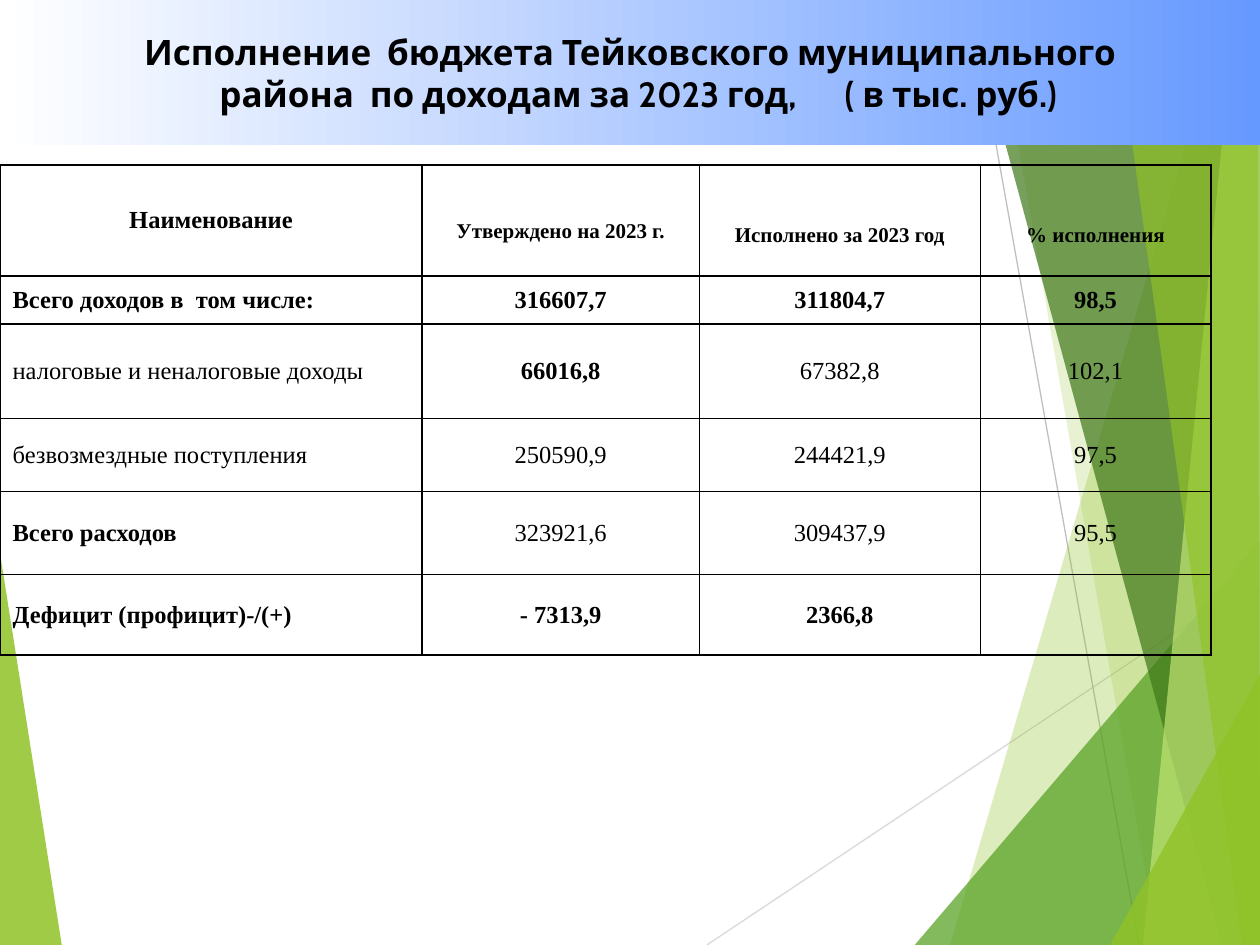
from lxml import etree
from pptx import Presentation, util as u
from pptx.dml.color import RGBColor
from pptx.enum import shapes, text
from pptx.oxml.ns import qn

BLACK = RGBColor(0, 0, 0)
WHITE = RGBColor(255, 255, 255)
BLUE = RGBColor(0x66, 0x99, 0xFF)
LIME = RGBColor(0x90, 0xC2, 0x26)
PALE = RGBColor(0xC0, 0xE4, 0x74)
GREEN = RGBColor(0x54, 0xA0, 0x21)
DARK = RGBColor(0x3F, 0x78, 0x19)
GREY = RGBColor(0xBF, 0xBF, 0xBF)
SILVER = RGBColor(0xD9, 0xD9, 0xD9)

# Points in inches, colour, opacity in percent
LEFT = [([(0, 4.39), (0.49, 7.5), (0, 7.5)], LIME, 85)]
RAYS = [
    ([(9.75, 0), (7.54, 7.5), (10, 7.5), (10, 0)], LIME, 30),
    ([(7.88, 0), (9.19, 7.5), (10, 7.5), (10, 0)], LIME, 20),
    ([(7.26, 7.5), (10, 4.29), (10, 7.5)], GREEN, 72),
    ([(7.67, 0), (9.7, 7.5), (10, 7.5), (10, 0)], DARK, 70),
    ([(9.81, 0), (9.07, 7.5), (10, 7.5), (10, 0)], PALE, 70),
    ([(8.83, 0), (9.86, 7.5), (10, 7.5), (9.98, 0)], LIME, 65),
    ([(8.81, 7.5), (10, 5.35), (10, 7.5)], LIME, 80),
]
LINES = [((5.61, 7.5), (10, 4.57), SILVER), ((7.7, 0), (9.04, 7.5), GREY)]

HEAD = ["Наименование", "Утверждено на 2023 г.", "Исполнено за 2023 год", "% исполнения"]
# Cell texts and, for each, whether it is bold
ROWS = [
    (["Всего доходов в  том числе:", "316607,7", "311804,7", "98,5"], (1, 1, 1, 1)),
    (["налоговые и неналоговые доходы", "66016,8", "67382,8", "102,1"], (0, 1, 0, 0)),
    (["безвозмездные поступления", "250590,9", "244421,9", "97,5"], (0, 0, 0, 0)),
    (["Всего расходов", "323921,6", "309437,9", "95,5"], (1, 0, 0, 0)),
    (["Дефицит (профицит)-/(+)", "- 7313,9", "2366,8", ""], (1, 1, 1, 0)),
]
WIDTHS = [3.35, 2.2, 2.23, 1.83]
HEIGHTS = [0.88, 0.38, 0.75, 0.58, 0.66, 0.64]


def add_run(para, words, font, size, bold=True):
    run = para.add_run()
    run.text = words
    run.font.name = font
    run.font.size = u.Pt(size)
    run.font.bold = bool(bold)
    run.font.color.rgb = BLACK
    return run


def add_facets(slide, left, top, facets):
    for points, color, alpha in facets:
        spots = [(left + u.Inches(x), top + u.Inches(y)) for x, y in points]
        pen = slide.shapes.build_freeform(*spots[0])
        pen.add_line_segments(spots[1:], close=True)
        facet = pen.convert_to_shape()
        facet.shadow.inherit = False
        facet.line.fill.background()
        facet.fill.solid()
        facet.fill.fore_color.rgb = color
        tint = facet.fill._xPr.find(".//" + qn("a:srgbClr"))
        etree.SubElement(tint, qn("a:alpha")).set("val", str(alpha * 1000))


def add_lines(slide, left, top):
    for (x1, y1), (x2, y2), color in LINES:
        line = slide.shapes.add_connector(
            shapes.MSO_CONNECTOR.STRAIGHT,
            left + u.Inches(x1), top + u.Inches(y1),
            left + u.Inches(x2), top + u.Inches(y2))
        line.line.color.rgb = color
        line.line.width = u.Pt(0.75)
        etree.SubElement(line._element.spPr, qn("a:effectLst"))


def add_title(slide, left, top, width, height):
    band = slide.shapes.add_shape(shapes.MSO_SHAPE.RECTANGLE, left, top, width, height)
    band.shadow.inherit = False
    band.line.fill.background()
    band.fill.gradient()
    band.fill.gradient_angle = 0
    for stop, color, place in zip(band.fill.gradient_stops, (WHITE, BLUE), (0, 1)):
        stop.color.rgb = color
        stop.position = place
    frame = band.text_frame
    frame.word_wrap = True
    frame.vertical_anchor = text.MSO_ANCHOR.MIDDLE
    first, second = frame.paragraphs[0], frame.add_paragraph()
    for para in (first, second):
        para.alignment = text.PP_ALIGN.CENTER
    add_run(first, "Исполнение  бюджета Тейковского муниципального", "Cabin", 20)
    add_run(second, "района  по доходам за 2023 год,", "Cabin", 20)
    gap = add_run(second, " ", "Cabin", 20)
    gap.font._element.set("spc", "2300")
    add_run(second, "( в тыс. руб.)", "Cabin", 20)
    second._p.get_or_add_pPr().set("marL", str(u.Inches(0.13)))


def add_border(cell):
    props = cell._tc.get_or_add_tcPr()
    for place, side in enumerate(("a:lnL", "a:lnR", "a:lnT", "a:lnB")):
        edge = etree.Element(qn(side), w=str(u.Pt(1)))
        fill = etree.SubElement(edge, qn("a:solidFill"))
        etree.SubElement(fill, qn("a:srgbClr"), val=str(BLACK))
        props.insert(place, edge)


def fill_cell(cell, words, size, bold, center):
    cell.fill.background()
    add_border(cell)
    cell.vertical_anchor = text.MSO_ANCHOR.MIDDLE
    para = cell.text_frame.paragraphs[0]
    para.alignment = text.PP_ALIGN.CENTER if center else text.PP_ALIGN.LEFT
    if words:
        add_run(para, words, "Times New Roman", size, bold)


def add_budget(slide, left, top, width, height):
    table = slide.shapes.add_table(
        len(HEIGHTS), len(WIDTHS), left, top, width, height).table
    table.first_row = table.horz_banding = False
    for col, wide in zip(table.columns, WIDTHS):
        col.width = u.Inches(wide)
    for row, high in zip(table.rows, HEIGHTS):
        row.height = u.Inches(high)
    for c, words in enumerate(HEAD):
        fill_cell(table.cell(0, c), words, 12 if c else 14, True, True)
    table.cell(0, 1).margin_top = u.Inches(0.23)
    for c in (2, 3):
        table.cell(0, c).vertical_anchor = text.MSO_ANCHOR.BOTTOM
        table.cell(0, c).margin_bottom = u.Inches(0.23)
    for r, (row, bolds) in enumerate(ROWS, 1):
        for c, (words, bold) in enumerate(zip(row, bolds)):
            fill_cell(table.cell(r, c), words, 14, bold, c > 0)


def main():
    deck = Presentation()
    deck.slide_width, deck.slide_height = u.Inches(10), u.Inches(7.5)
    slide = deck.slides.add_slide(deck.slide_layouts[6])
    add_facets(slide, 0, 0, LEFT)
    add_lines(slide, 0, 0)
    add_facets(slide, 0, 0, RAYS)
    add_title(slide, 0, 0, u.Inches(10), u.Inches(1.15))
    add_budget(slide, 0, u.Inches(1.31), u.Inches(sum(WIDTHS)), u.Inches(sum(HEIGHTS)))
    deck.save("out.pptx")


if __name__ == "__main__":
    main()
